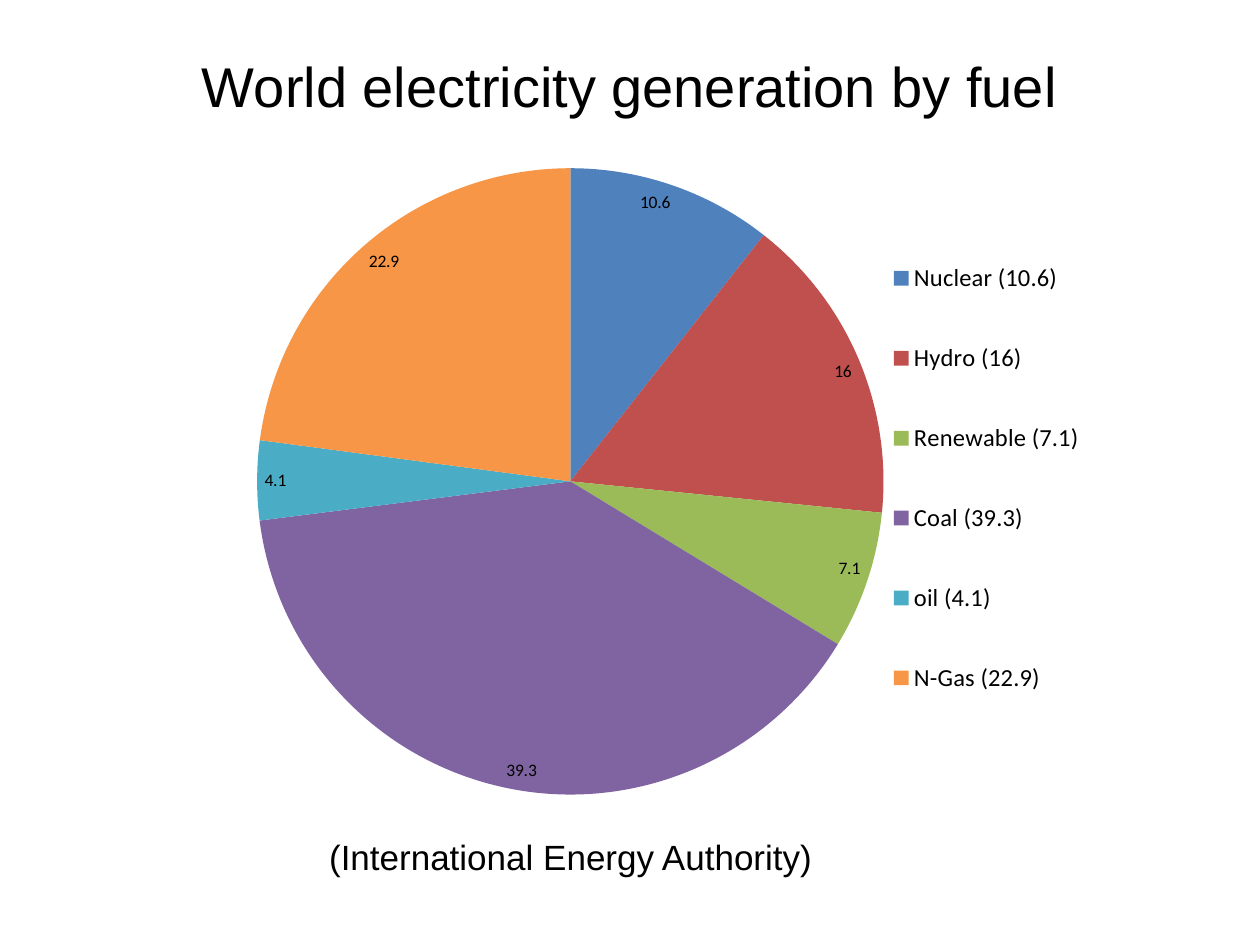
from lxml import etree
from pptx import Presentation
from pptx.chart.data import CategoryChartData
from pptx.dml.color import RGBColor
from pptx.enum.chart import XL_CHART_TYPE, XL_LABEL_POSITION, XL_LEGEND_POSITION
from pptx.enum.text import MSO_ANCHOR, PP_ALIGN
from pptx.oxml.ns import qn
from pptx.util import Inches, Pt

PIE = XL_CHART_TYPE.PIE
INSIDE_END = XL_LABEL_POSITION.INSIDE_END
LEGEND_RIGHT = XL_LEGEND_POSITION.RIGHT
MIDDLE = MSO_ANCHOR.MIDDLE
CENTER = PP_ALIGN.CENTER

BLACK = RGBColor(0x00, 0x00, 0x00)
FUELS = [
    ("Nuclear", 10.6, RGBColor(0x4F, 0x81, 0xBD)),
    ("Hydro", 16, RGBColor(0xC0, 0x50, 0x4D)),
    ("Renewable", 7.1, RGBColor(0x9B, 0xBB, 0x59)),
    ("Coal", 39.3, RGBColor(0x80, 0x64, 0xA2)),
    ("oil", 4.1, RGBColor(0x4B, 0xAC, 0xC6)),
    ("N-Gas", 22.9, RGBColor(0xF7, 0x96, 0x46)),
]


def write_text(shape, text, size):
    frame = shape.text_frame
    frame.vertical_anchor = MIDDLE
    paragraph = frame.paragraphs[0]
    paragraph.alignment = CENTER
    run = paragraph.add_run()
    run.text = text
    run.font.name = "Arial"
    run.font.size = Pt(size)
    run.font.color.rgb = BLACK


def place_in_chart(layout, values):
    for child in list(layout):
        layout.remove(child)
    manual = etree.SubElement(layout, qn("c:manualLayout"))
    for name, value in values.items():
        etree.SubElement(manual, qn(f"c:{name}")).set("val", str(value))


presentation = Presentation()
presentation.slide_width = Inches(10)
presentation.slide_height = Inches(7.5)
slide = presentation.slides.add_slide(presentation.slide_layouts[5])

title = slide.shapes.title
title_box = {"left": 0.5, "top": 0.3, "width": 9, "height": 1.25}
for name, value in title_box.items():
    setattr(title, name, Inches(value))
write_text(title, "World electricity generation by fuel", 32)
title.text_frame.margin_bottom = Inches(0.55)

source_note = slide.shapes.add_textbox(
    Inches(2.42), Inches(6.58), Inches(4.22), Inches(0.44))
source_note.text_frame.word_wrap = False
write_text(source_note, "(International Energy Authority)", 20)

data = CategoryChartData()
data.categories = [f"{fuel} ({share})" for fuel, share, color in FUELS]
data.add_series("Series 1", [share for fuel, share, color in FUELS])
chart = slide.shapes.add_chart(
    PIE, Inches(1.67), Inches(1.17), Inches(7.42), Inches(5.25), data).chart
chart.has_title = False
chart.font.name = "Calibri"
chart.font.size = Pt(10)
chart.font.color.rgb = BLACK

chart.has_legend = True
legend = chart.legend
legend.position = LEGEND_RIGHT
legend.include_in_layout = False
legend.font.name = "Calibri"
legend.font.size = Pt(14)
legend.font.color.rgb = BLACK

plot = chart.plots[0]
plot.vary_by_categories = True
plot.has_data_labels = True
labels = plot.data_labels
labels.show_value = True
labels.show_percentage = False
labels.position = INSIDE_END
for index, (fuel, share, color) in enumerate(FUELS):
    fill = plot.series[0].points[index].format.fill
    fill.solid()
    fill.fore_color.rgb = color

plot_area = chart.element.chart.plotArea
plot_layout = plot_area.find(qn("c:layout"))
if plot_layout is None:
    plot_layout = etree.Element(qn("c:layout"))
    plot_area.insert(0, plot_layout)
place_in_chart(plot_layout, {
    "layoutTarget": "inner", "xMode": "edge", "yMode": "edge",
    "x": 0.05, "y": 0.03, "w": 0.67, "h": 0.95})

legend_element = chart.element.chart.find(qn("c:legend"))
legend_layout = legend_element.find(qn("c:layout"))
if legend_layout is None:
    legend_layout = etree.Element(qn("c:layout"))
    legend_element.find(qn("c:legendPos")).addnext(legend_layout)
place_in_chart(legend_layout, {
    "xMode": "edge", "yMode": "edge",
    "x": 0.72, "y": 0.1, "w": 0.22, "h": 0.8})

presentation.save("out.pptx")
